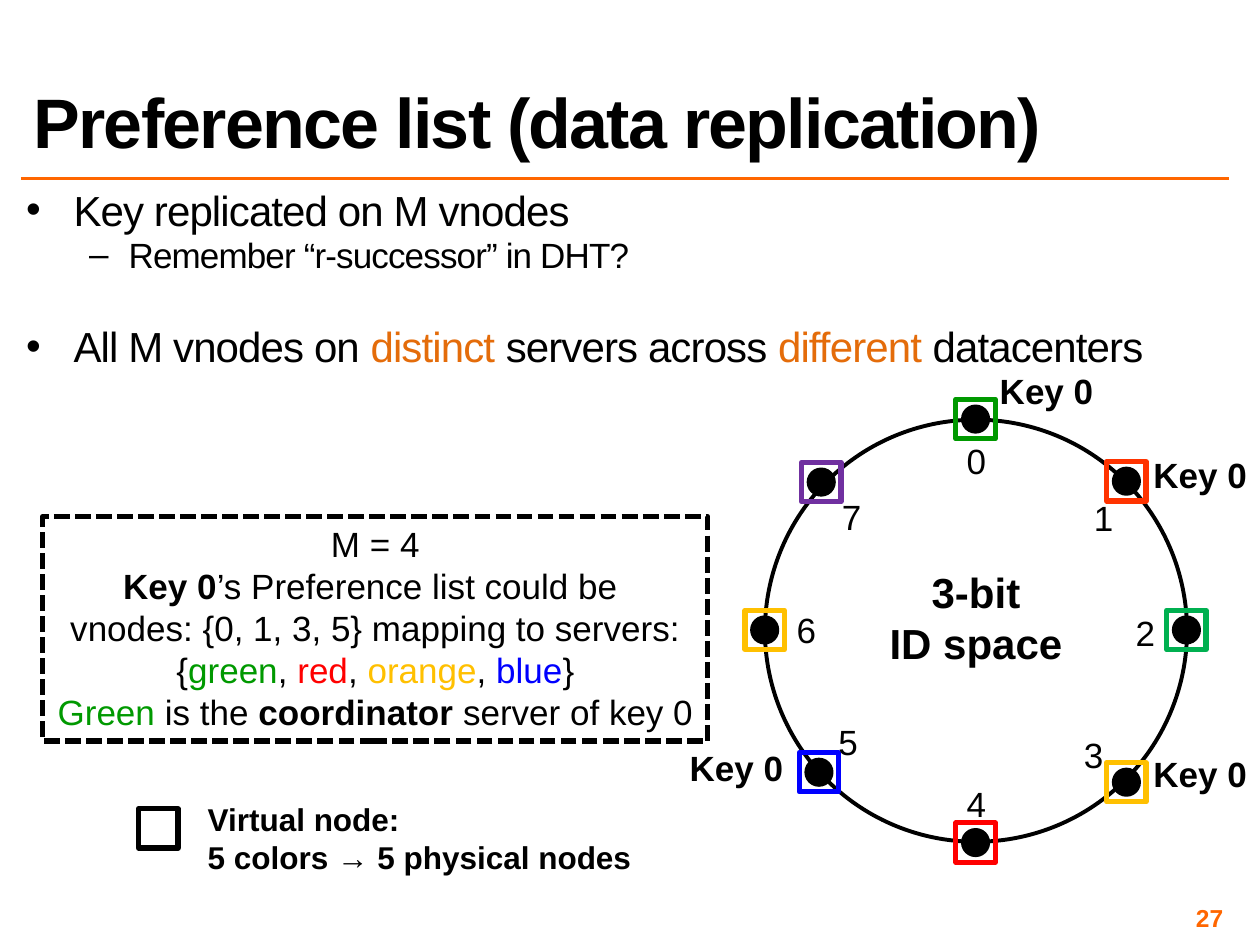
from lxml import etree
from pptx import Presentation
from pptx.dml.color import RGBColor
from pptx.enum.dml import MSO_LINE
from pptx.enum.shapes import MSO_CONNECTOR, MSO_SHAPE
from pptx.enum.text import MSO_ANCHOR, MSO_AUTO_SIZE, PP_ALIGN
from pptx.oxml.ns import qn
from pptx.util import Pt

LEFT, CENTER, RIGHT = PP_ALIGN.LEFT, PP_ALIGN.CENTER, PP_ALIGN.RIGHT
TOP, MIDDLE, BOTTOM = MSO_ANCHOR.TOP, MSO_ANCHOR.MIDDLE, MSO_ANCHOR.BOTTOM
RECT, OVAL = MSO_SHAPE.RECTANGLE, MSO_SHAPE.OVAL

FONT = "Arial"
BLACK = RGBColor(0x00, 0x00, 0x00)
ACCENT = RGBColor(0xFF, 0x66, 0x00)
EMPHASIS = RGBColor(0xE4, 0x6C, 0x0A)
GREEN = RGBColor(0x00, 0x99, 0x00)
LIGHT_GREEN = RGBColor(0x00, 0xB0, 0x50)
RED = RGBColor(0xFF, 0x00, 0x00)
ORANGE_RED = RGBColor(0xFF, 0x33, 0x00)
ORANGE = RGBColor(0xFF, 0xC0, 0x00)
PURPLE = RGBColor(0x70, 0x30, 0xA0)
BLUE = RGBColor(0x00, 0x00, 0xFF)

# Content: a run is (text, colour, bold), a paragraph is a list of runs
TITLE = "Preference list (data replication)"
BULLETS = [  # level, size, space before, runs
    (0, 24, 4.8, [("Key replicated on M vnodes", BLACK, False)]),
    (1, 20, 4, [("Remember “r-successor” in DHT?", BLACK, False)]),
    (0, 24, 31.7, [("All M vnodes on ", BLACK, False),
                   ("distinct", EMPHASIS, False),
                   (" servers across ", BLACK, False),
                   ("different", EMPHASIS, False),
                   (" datacenters", BLACK, False)]),
]
INDENTS = [(27, -27), (58.5, -22.5)]  # left margin and first line, by level
EXAMPLE = [
    [("M = 4", BLACK, False)],
    [("Key 0", BLACK, True), ("’s Preference list could be ", BLACK, False)],
    [("vnodes: {0, 1, 3, 5} mapping to servers:", BLACK, False)],
    [("{", BLACK, False), ("green", GREEN, False), (", ", BLACK, False),
     ("red", RED, False), (", ", BLACK, False),
     ("orange", ORANGE, False), (", ", BLACK, False),
     ("blue", BLUE, False), ("}", BLACK, False)],
    [("Green", GREEN, False), (" is the ", BLACK, False),
     ("coordinator", BLACK, True), (" server of key 0", BLACK, False)],
]
RING_LABEL = [[("3-bit", BLACK, True)], [("ID space", BLACK, True)]]
LEGEND = [[("Virtual node:", BLACK, True)],
          [("5 colors → 5 physical nodes", BLACK, True)]]
VNODES = [  # node centre, number centre, server colour
    ((557.5, 239.5), (558, 263.5), GREEN),
    ((643.7, 275), (630.7, 295.9), ORANGE_RED),
    ((678, 360), (654.5, 361.4), LIGHT_GREEN),
    ((643.7, 447), (625, 431.3), ORANGE),
    ((557.5, 481.5), (558, 459.4), RED),
    ((468, 441.3), (484.6, 424.1), BLUE),
    ((437, 360), (460.8, 360), ORANGE),
    ((469.3, 275.5), (486.7, 295.2), PURPLE),
]
KEY_CENTERS = [(598, 223.2), (685.8, 271.4), (685.8, 442.1), (420.8, 438.5)]
RING_CENTER, RING_SIZE = (557.7, 360.4), 241.2
DOT_SIZE, NODE_SIZE = 14.4, 22.5


def add_runs(p, runs, size, spacing=None):
    for text, color, bold in runs:
        r = p.add_run()
        r.text = text
        r.font.name, r.font.size, r.font.bold = FONT, Pt(size), bold
        r.font.color.rgb = color
        if spacing:
            r.font._element.set("spc", str(round(spacing * 100)))


def add_paragraphs(tf, paragraphs, size, align):
    for i, runs in enumerate(paragraphs):
        p = tf.add_paragraph() if i else tf.paragraphs[0]
        p.alignment = align
        add_runs(p, runs, size)


def set_box(sp, left, top, width, height):
    sp.left, sp.top, sp.width, sp.height = map(Pt, (left, top, width, height))


def box_around(center, width, height):
    return center[0] - width / 2, center[1] - height / 2, width, height


def add_text(box, paragraphs, size, align=CENTER, anchor=TOP, wrap=False):
    tf = slide.shapes.add_textbox(*map(Pt, box)).text_frame
    tf.word_wrap, tf.vertical_anchor = wrap, anchor
    add_paragraphs(tf, paragraphs, size, align)
    return tf


def add_outline(kind, box, color, width, fill=None):
    sp = slide.shapes.add_shape(kind, *map(Pt, box))
    sp.shadow.inherit = False
    if fill is None:
        sp.fill.background()
    else:
        sp.fill.solid()
        sp.fill.fore_color.rgb = fill
    sp.line.color.rgb, sp.line.width = color, Pt(width)
    return sp


def set_insets(tf, inset):
    tf.margin_left = tf.margin_top = tf.margin_right = tf.margin_bottom = Pt(inset)


prs = Presentation()
prs.slide_width, prs.slide_height = Pt(720), Pt(540)
slide = prs.slides.add_slide(prs.slide_layouts[1])

# Title and rule below it
title = slide.shapes.title
set_box(title, 12, 12, 690, 84)
tf = title.text_frame
tf.auto_size, tf.vertical_anchor = MSO_AUTO_SIZE.NONE, BOTTOM
p = tf.paragraphs[0]
p.alignment, p.line_spacing = LEFT, 0.8
add_runs(p, [(TITLE, BLACK, True)], 40, -1)

rule = slide.shapes.add_connector(MSO_CONNECTOR.STRAIGHT,
                                  Pt(12), Pt(102), Pt(702), Pt(102))
rule.line.color.rgb, rule.line.width = ACCENT, Pt(2)
etree.SubElement(rule._element.spPr, qn("a:effectLst"))

# Bullet list
body = slide.placeholders[1]
set_box(body, 12, 108, 690, 396)
tf = body.text_frame
tf.auto_size = MSO_AUTO_SIZE.NONE
set_insets(tf, 3)
for i, (level, size, before, runs) in enumerate(BULLETS):
    p = tf.add_paragraph() if i else tf.paragraphs[0]
    p.level, p.line_spacing, p.space_before = level, 0.8, Pt(before)
    margin, indent = INDENTS[level]
    pPr = p._p.get_or_add_pPr()
    pPr.set("marL", str(Pt(margin)))
    pPr.set("indent", str(Pt(indent)))
    add_runs(p, runs, size, -0.5)

# Slide number
tf = add_text((534, 516, 168, 17), [[("27", ACCENT, True)]], 14, RIGHT, MIDDLE, True)
set_insets(tf, 3)

# Identifier ring with its virtual nodes
add_outline(OVAL, box_around(RING_CENTER, RING_SIZE, RING_SIZE), BLACK, 2.25)
add_text(box_around(RING_CENTER, 114, 65.5)[:1] + (320.4, 114, 65.5), RING_LABEL, 24)
for number, (center, label_center, color) in enumerate(VNODES):
    add_outline(OVAL, box_around(center, DOT_SIZE, DOT_SIZE), BLACK, 2.25, BLACK)
    add_outline(RECT, box_around(center, NODE_SIZE, NODE_SIZE), color, 3)
    add_text(box_around(label_center, 26, 31.5), [[(str(number), BLACK, False)]], 20)
for center in KEY_CENTERS:
    add_text(box_around(center, 68.5, 31.5), [[("Key 0", BLACK, True)]], 20)

# Legend
add_outline(RECT, (79.2, 462.2, NODE_SIZE, NODE_SIZE), BLACK, 3)
add_text((111.6, 453.6, 258.5, 51), LEGEND, 18, LEFT)

# Worked example in a dashed box
example = add_outline(RECT, (24.5, 295.2, 380, 128.2), BLACK, 3)
example.line.dash_style = MSO_LINE.SQUARE_DOT
tf = example.text_frame
tf.word_wrap, tf.vertical_anchor = False, TOP
add_paragraphs(tf, EXAMPLE, 20, CENTER)

prs.save("out.pptx")
